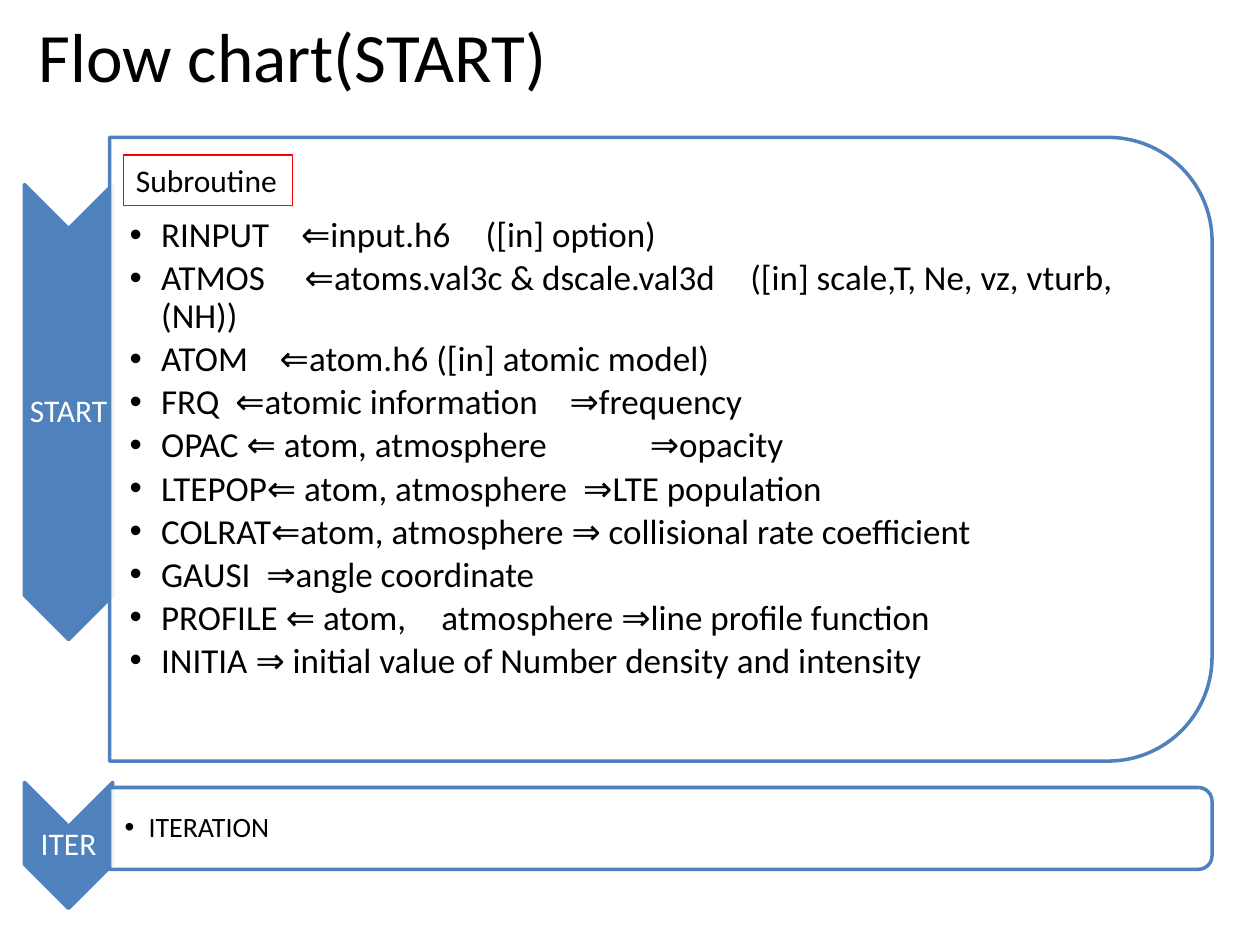
import pptx
import pptx.util
import pptx.dml.color
import pptx.enum.shapes
import pptx.enum.text
import pptx.oxml
import pptx.oxml.ns

Pt = pptx.util.Pt
RGB = pptx.dml.color.RGBColor.from_string
SHAPE = pptx.enum.shapes.MSO_SHAPE
ALIGN = pptx.enum.text.PP_ALIGN
ANCHOR = pptx.enum.text.MSO_ANCHOR
qn = pptx.oxml.ns.qn

# Content: a number between two strings is a gap that many spaces wide
TITLE = "Flow chart(START)"
CAPTION = "Subroutine"
SUBROUTINES = [
    ("RINPUT", 4, "⇐input.h6　([in] option)"),
    ("ATMOS", 5, "⇐atoms.val3c & dscale.val3d　([in] scale,T, Ne, vz, vturb,(NH))"),
    ("ATOM", 4, "⇐atom.h6 ([in] atomic model)"),
    ("FRQ", 2, "⇐atomic information", 4, "⇒frequency"),
    ("OPAC ⇐ atom, atmosphere", 13, "⇒opacity"),
    ("LTEPOP⇐ atom, atmosphere", 2, "⇒LTE population"),
    ("COLRAT⇐atom, atmosphere ⇒ collisional rate coefficient",),
    ("GAUSI", 2, "⇒angle coordinate"),
    ("PROFILE ⇐ atom,　atmosphere ⇒line profile function",),
    ("INITIA ⇒ initial value of Number density and intensity",),
]

# Stage boxes are (left, top, width, height) in points, as seen after rotation
STAGES = [
    dict(label="START", rows=SUBROUTINES, size="list", indent=18, inset=11.5,
         chevron=(14, 105.5, 50.4, 260), panel=(62.6, 78.5, 630, 356.4),
         body=(62.6, 95.8, 612.7, 321.8)),
    dict(label="ITER", rows=[("ITERATION",)], size="small", indent=13.7, inset=8.64,
         chevron=(14, 447.1, 50.4, 72), panel=(62.6, 450, 630, 46.8),
         body=(62.6, 452.2, 627.8, 42.5)),
]

THEME = dict(
    font="Calibri", accent="4F81BD", ink="000000", paper="FFFFFF", alert="FF0000",
    title=39.6, list=20, label=18, small=16, space_em=0.226,
)


def place(shape, box):
    for side, value in zip(("left", "top", "width", "height"), box):
        setattr(shape, side, Pt(value))


def set_frame(frame, margins, anchor):
    values = dict(word_wrap=True, auto_size=pptx.enum.text.MSO_AUTO_SIZE.NONE,
                  vertical_anchor=anchor)
    for side, margin in zip(("left", "top", "right", "bottom"), margins):
        values["margin_" + side] = Pt(margin)
    for name, value in values.items():
        setattr(frame, name, value)


def add_run(paragraph, text, size, color="ink"):
    run = paragraph.add_run()
    run.text = text
    run.font.name = THEME["font"]
    run.font.size = Pt(THEME[size])
    run.font.color.rgb = RGB(THEME[color])
    return run


def add_rotated(slide, kind, box, fill, opacity=100):
    """Draw a shape turned by 90 degrees that covers the given box."""
    left, top, width, height = box
    shift = (width - height) / 2
    shape = slide.shapes.add_shape(kind, *map(Pt, (left + shift, top - shift, height, width)))
    shape.rotation = 90
    shape.shadow.inherit = False
    shape.fill.solid()
    shape.fill.fore_color.rgb = RGB(THEME[fill])
    if opacity < 100:
        color = shape.fill._xPr.find(qn("a:solidFill"))[0]
        alpha = pptx.oxml.parse_xml(f'<a:alpha {pptx.oxml.ns.nsdecls("a")} val="{opacity * 1000}"/>')
        color.append(alpha)
    shape.line.color.rgb = RGB(THEME["accent"])
    shape.line.width = Pt(2)


def add_label(slide, text, box):
    label = slide.shapes.add_textbox(*map(Pt, box))
    set_frame(label.text_frame, (0.7,) * 4, ANCHOR.MIDDLE)
    paragraph = label.text_frame.paragraphs[0]
    paragraph.alignment = ALIGN.CENTER
    paragraph.line_spacing = 0.9
    add_run(paragraph, text, "label", "paper")


def fill_list(body, stage):
    place(body, stage["body"])
    frame = body.text_frame
    set_frame(frame, (stage["inset"], 0.7, 0.7, 0.7), ANCHOR.MIDDLE)
    size = THEME[stage["size"]]
    for number, row in enumerate(stage["rows"]):
        paragraph = frame.add_paragraph() if number else frame.paragraphs[0]
        formats = dict(line_spacing=0.9, space_before=Pt(0), space_after=Pt(0.15 * size),
                       alignment=ALIGN.LEFT)
        for name, value in formats.items():
            setattr(paragraph, name, value)
        properties = paragraph._p.get_or_add_pPr()
        properties.set("marL", str(Pt(stage["indent"])))
        properties.set("indent", str(-Pt(stage["indent"])))
        for part in row:
            if isinstance(part, str):
                add_run(paragraph, part, stage["size"])
            else:
                # One space, widened by letter spacing
                gap = add_run(paragraph, " ", stage["size"])
                extra = (part - 1) * THEME["space_em"] * size
                gap.font._element.set("spc", str(round(extra * 100)))


def main():
    deck = pptx.Presentation()
    deck.slide_width, deck.slide_height = Pt(720), Pt(540)
    slide = deck.slides.add_slide(deck.slide_layouts[3])
    title, *bodies = slide.placeholders

    # Title
    place(title, (8.6, -13.7, 317.5, 90))
    set_frame(title.text_frame, (7.2, 3.6, 7.2, 3.6), ANCHOR.MIDDLE)
    heading = title.text_frame.paragraphs[0]
    heading.alignment = ALIGN.CENTER
    add_run(heading, TITLE, "title")

    # Stages: chevron and label on the left, list on a panel
    for stage, body in zip(STAGES, bodies):
        add_rotated(slide, SHAPE.CHEVRON, stage["chevron"], "accent")
        add_label(slide, stage["label"], stage["chevron"])
        add_rotated(slide, SHAPE.ROUND_2_SAME_RECTANGLE, stage["panel"], "paper", 90)
        fill_list(body, stage)
        slide.shapes._spTree.append(body._element)  # in front of its panel

    # Caption of the subroutine list
    caption = slide.shapes.add_textbox(*map(Pt, (70.6, 88.6, 96.5, 29)))
    caption.line.color.rgb = RGB(THEME["alert"])
    caption.line.width = Pt(0.75)
    set_frame(caption.text_frame, (7.2, 3.6, 7.2, 3.6), ANCHOR.TOP)
    add_run(caption.text_frame.paragraphs[0], CAPTION, "label")

    deck.save("out.pptx")


if __name__ == "__main__":
    main()
